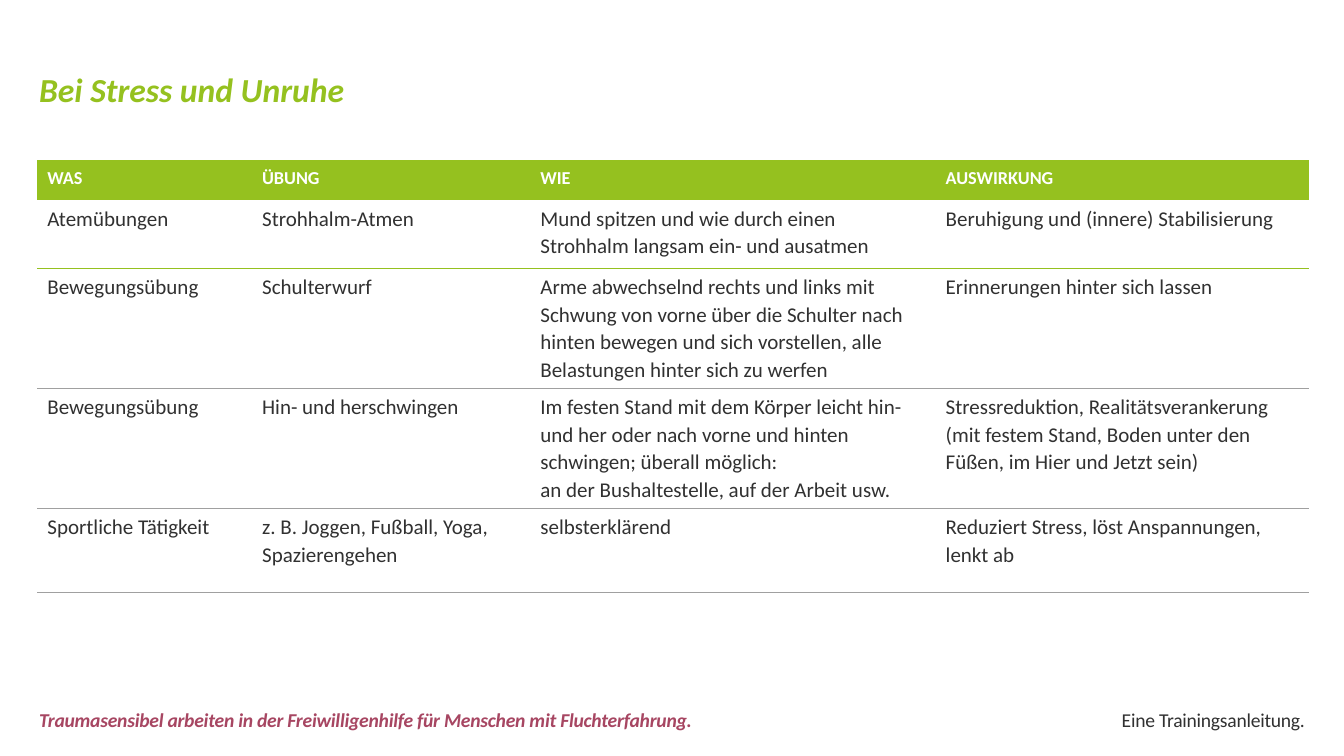
import lxml.etree
import pptx
import pptx.dml.color
import pptx.enum.text
import pptx.oxml.ns
import pptx.util

Inches = pptx.util.Inches
Pt = pptx.util.Pt
ALIGN = pptx.enum.text.PP_ALIGN
ANCHOR = pptx.enum.text.MSO_ANCHOR

FONT = "Calibri"
GREEN = "95C11F"
DARK = "313131"
BERRY = "A74662"
GREY = "A0A0A0"
WHITE = "FFFFFF"
NO_TABLE_STYLE = "{2D5ABB26-0587-4C30-8999-92F81FD0307C}"

COLUMN_WIDTHS = [2.13, 2.76, 4.02, 3.7]
ROW_HEIGHTS = [0.39, 0.68, 1.19, 1.19, 0.84]
RULE_COLOURS = [GREEN, GREEN, GREY, GREY, GREY]
EXERCISES = [
    ["WAS", "ÜBUNG", "WIE", "AUSWIRKUNG"],
    ["Atemübungen", "Strohhalm-Atmen",
     "Mund spitzen und wie durch einen Strohhalm langsam ein- und ausatmen",
     "Beruhigung und (innere) Stabilisierung"],
    ["Bewegungsübung", "Schulterwurf",
     "Arme abwechselnd rechts und links mit Schwung von vorne über die Schulter nach "
     "hinten bewegen und sich vorstellen, alle Belastungen hinter sich zu werfen",
     "Erinnerungen hinter sich lassen"],
    ["Bewegungsübung", "Hin- und herschwingen",
     "Im festen Stand mit dem Körper leicht hin- und her oder nach vorne und hinten "
     "schwingen; überall möglich: \van der Bushaltestelle, auf der Arbeit usw.",
     "Stressreduktion, Realitätsverankerung \v(mit festem Stand, Boden unter den Füßen, "
     "im Hier und Jetzt sein)"],
    ["Sportliche Tätigkeit", "z. B. Joggen, Fußball, Yoga, Spazierengehen",
     "selbsterklärend", "Reduziert Stress, löst Anspannungen, lenkt ab"],
]


def colour(value):
    return pptx.dml.color.RGBColor.from_string(value)


def write(frame, text, size, hue, bold=False, italic=False):
    para = frame.paragraphs[0]
    para.text = text
    font = para.font
    font.name, font.size = FONT, Pt(size)
    font.bold, font.italic = bold, italic
    font.color.rgb = colour(hue)
    return para


def add_text(page, left, top, width, height, text, size, hue, emphasis, wrap=True):
    box = page.shapes.add_textbox(Inches(left), Inches(top), Inches(width), Inches(height))
    box.text_frame.word_wrap = wrap
    return box, write(box.text_frame, text, size, hue, emphasis, emphasis)


def add_title(page, left, top, width, height):
    box, para = add_text(page, left, top, width, height,
                         "Bei Stress und Unruhe", 24, GREEN, True)
    box.text_frame.vertical_anchor = ANCHOR.MIDDLE
    para.line_spacing = Pt(32)


def add_footer(page, left, top, width, height):
    note_width = 2.05
    motto_width = 6.67
    parts = [
        (left, motto_width, BERRY, True, ALIGN.LEFT,
         "Traumasensibel arbeiten in der Freiwilligenhilfe für Menschen mit Fluchterfahrung."),
        (left + width - note_width, note_width, DARK, False, ALIGN.RIGHT,
         "Eine Trainingsanleitung."),
    ]
    for part_left, part_width, hue, emphasis, alignment, text in parts:
        box, para = add_text(page, part_left, top, part_width, height,
                             text, 14, hue, emphasis, wrap=False)
        para.alignment = alignment
        para.runs[0].font._element.set("spc", "-20")


def rule_below(cell, hue):
    qn = pptx.oxml.ns.qn
    properties = cell._tc.get_or_add_tcPr()
    line = lxml.etree.SubElement(properties, qn("a:lnB"), w=str(Pt(0.5)))
    fill = lxml.etree.SubElement(line, qn("a:solidFill"))
    lxml.etree.SubElement(fill, qn("a:srgbClr"), val=hue)


def add_exercise_table(page, left, top):
    frame = page.shapes.add_table(
        len(ROW_HEIGHTS), len(COLUMN_WIDTHS), Inches(left), Inches(top),
        Inches(sum(COLUMN_WIDTHS)), Inches(sum(ROW_HEIGHTS)))
    table = frame.table
    table.horz_banding = False
    style = table._tbl.tblPr.find(pptx.oxml.ns.qn("a:tableStyleId"))
    style.text = NO_TABLE_STYLE
    for column, width in zip(table.columns, COLUMN_WIDTHS):
        column.width = Inches(width)
    for index, (row, height) in enumerate(zip(table.rows, ROW_HEIGHTS)):
        row.height = Inches(height)
        header = index == 0
        for cell, text in zip(row.cells, EXERCISES[index]):
            rule_below(cell, RULE_COLOURS[index])
            if header:
                cell.fill.solid()
                cell.fill.fore_color.rgb = colour(GREEN)
                para = write(cell.text_frame, text, 13, WHITE, bold=True)
            else:
                cell.fill.background()
                para = write(cell.text_frame, text, 15, DARK)
            para.line_spacing = 1.07


def main():
    deck = pptx.Presentation()
    deck.slide_width, deck.slide_height = Inches(13.33), Inches(7.5)
    page = deck.slides.add_slide(deck.slide_layouts[6])
    add_footer(page, 0.29, 6.97, 12.75, 0.34)
    add_title(page, 0.29, 0.63, 12.73, 0.47)
    add_exercise_table(page, 0.37, 1.59)
    deck.save("out.pptx")


if __name__ == "__main__":
    main()
